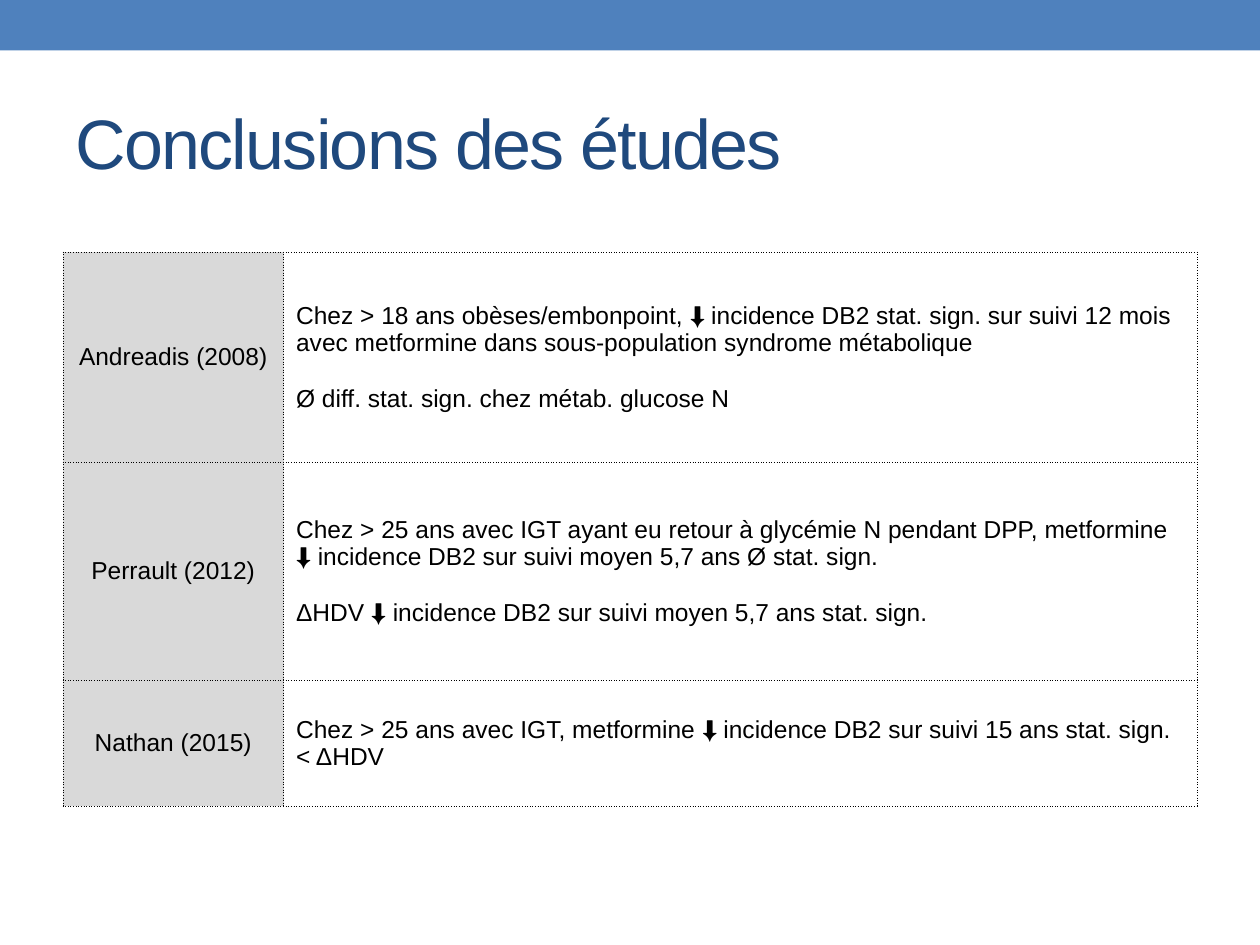
import pptx
import pptx.util
import pptx.dml.color
import pptx.enum.shapes
import pptx.enum.text
import pptx.oxml
import pptx.oxml.ns

Pt = pptx.util.Pt
Align = pptx.enum.text.PP_ALIGN
Anchor = pptx.enum.text.MSO_ANCHOR

COLORS = {"band": "4F81BD", "title": "1F497D", "text": "000000",
          "label": "D9D9D9", "rule": "000000"}

# Each study: row height in inches, name, findings as (text, space before)
STUDIES = [
    (1.67, "Andreadis (2008)", [
        ("Chez > 18 ans obèses/embonpoint, ⬇ incidence DB2 stat. sign. sur suivi 12 mois "
         "avec metformine dans sous-population syndrome métabolique", 0),
        ("Ø diff. stat. sign. chez métab. glucose N", 16)]),
    (1.73, "Perrault (2012)", [
        ("Chez > 25 ans avec IGT ayant eu retour à glycémie N pendant DPP, metformine "
         "⬇ incidence DB2 sur suivi moyen 5,7 ans Ø stat. sign.", 0),
        ("ΔHDV ⬇ incidence DB2 sur suivi moyen 5,7 ans stat. sign.", 16)]),
    (1, "Nathan (2015)", [
        ("Chez > 25 ans avec IGT, metformine ⬇ incidence DB2 sur suivi 15 ans stat. sign.", 0),
        ("< ΔHDV", 0)]),
]


def rgb(name):
    return pptx.dml.color.RGBColor.from_string(COLORS[name])


class Deck:
    """Holds the style and the current slide; lengths are in inches of a 10 x 7.5 grid."""
    face = "Arial"

    def __init__(self):
        self.file = pptx.Presentation()
        self.file.slide_width = pptx.util.Inches(10)
        self.file.slide_height = pptx.util.Inches(7.5)
        self.unit = self.file.slide_width / 10
        self.slide = self.file.slides.add_slide(self.file.slide_layouts[5])

    def span(self, *cells):
        return [pptx.util.Emu(round(n * self.unit)) for n in cells]

    def font(self, para, size, color):
        para.font.name = self.face
        para.font.size = Pt(size)
        para.font.color.rgb = rgb(color)

    def band(self, *box):
        shape = self.slide.shapes.add_shape(
            pptx.enum.shapes.MSO_SHAPE.RECTANGLE, *self.span(*box))
        shape.shadow.inherit = False
        shape.fill.solid()
        shape.fill.fore_color.rgb = rgb("band")
        shape.line.fill.background()

    def title(self, text, *box):
        head = self.slide.shapes.title
        head.left, head.top, head.width, head.height = self.span(*box)
        frame = head.text_frame
        frame.text = text
        frame.vertical_anchor = Anchor.MIDDLE
        para = frame.paragraphs[0]
        para.alignment = Align.LEFT
        self.font(para, 40, "title")
        para.runs[0].font._element.set("spc", "-100")

    def rules(self, cell):
        props = cell._tc.get_or_add_tcPr()
        for side in "LRTB":
            props.append(pptx.oxml.parse_xml(
                f'<a:ln{side} {pptx.oxml.ns.nsdecls("a")} w="{Pt(0.5)}"><a:solidFill>'
                f'<a:srgbClr val="{COLORS["rule"]}"/></a:solidFill>'
                f'<a:prstDash val="sysDot"/></a:ln{side}>'))

    def cell(self, cell, lines, align, fill=None):
        self.rules(cell)
        if fill:
            cell.fill.solid()
            cell.fill.fore_color.rgb = rgb(fill)
        else:
            cell.fill.background()
        cell.vertical_anchor = Anchor.MIDDLE
        frame = cell.text_frame
        for i, (text, gap) in enumerate(lines):
            para = frame.add_paragraph() if i else frame.paragraphs[0]
            para.text = text
            para.alignment = align
            para.space_before = Pt(gap)
            self.font(para, 14, "text")

    def table(self, left, top, widths, rows):
        high = sum(row[0] for row in rows)
        table = self.slide.shapes.add_table(
            len(rows), len(widths), *self.span(left, top, sum(widths), high)).table
        table.first_row = table.horz_banding = False
        for col, width in zip(table.columns, self.span(*widths)):
            col.width = width
        for i, (height, name, lines) in enumerate(rows):
            table.rows[i].height = self.span(height)[0]
            self.cell(table.cell(i, 0), [(name, 0)], Align.CENTER, "label")
            self.cell(table.cell(i, 1), lines, Align.LEFT)


def main():
    deck = Deck()
    # Top band and title
    deck.band(0, 0, 10, 0.4)
    deck.title("Conclusions des études", 0.5, 0.58, 9, 1.08)
    # Conclusions by study
    deck.table(0.5, 2, [1.75, 7.25], STUDIES)
    deck.file.save("out.pptx")


if __name__ == "__main__":
    main()
